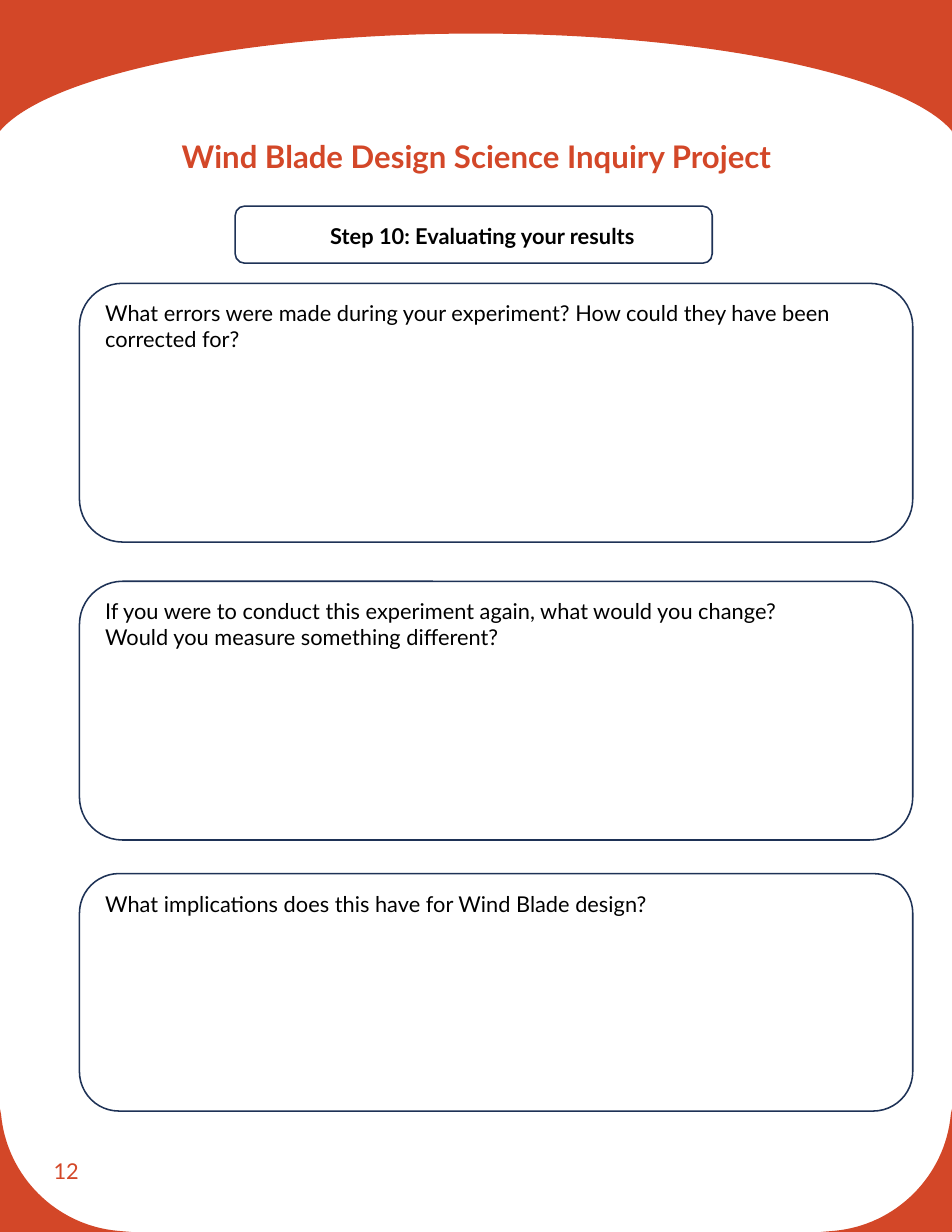
from dataclasses import dataclass

from lxml.etree import SubElement
from pptx import Presentation
from pptx.dml.color import RGBColor
from pptx.enum.shapes import MSO_SHAPE
from pptx.enum.text import MSO_ANCHOR, PP_ALIGN
from pptx.oxml.ns import qn
from pptx.util import Inches, Pt

WIDTH, HEIGHT = 8.5, 11
PANEL_LEFT, PANEL_WIDTH = 0.71, 7.44


@dataclass(frozen=True)
class Theme:
    font: str = "Lato"
    accent: RGBColor = RGBColor(0xD3, 0x47, 0x28)
    outline: RGBColor = RGBColor(0x1E, 0x32, 0x56)
    ink: RGBColor = RGBColor(0, 0, 0)
    title_size: Pt = Pt(20)
    body_size: Pt = Pt(14)
    outline_width: Pt = Pt(1)


THEME = Theme()

# Each step holds one point for a line, or two controls and an end for a curve.
ARCH = [
    [(0, 0)],
    [(WIDTH, 0)],
    [(WIDTH, 1.18)],
    [(WIDTH, 1.17)],
    [(8.09, 0.68), (6.34, 0.3), (4.25, 0.3)],
    [(2.16, 0.3), (0.41, 0.68), (0, 1.17)],
    [(0, 1.18)],
]
CORNER = [
    [(0, 9.9)],
    [(0.01, 9.95)],
    [(0.06, 10.5), (0.5, 10.94), (1.05, 10.99)],
    [(1.17, HEIGHT)],
    [(0, HEIGHT)],
]

PANELS = [
    (2.53, 2.31, [
        "What errors were made during your experiment? How could they have been",
        "corrected for?",
    ]),
    (5.19, 2.31, [
        "If you were to conduct this experiment again, what would you change?",
        "Would you measure something different?",
    ]),
    (7.8, 2.12, ["What implications does this have for Wind Blade design?"]),
]


def mirror(steps):
    return [[(WIDTH - x, y) for x, y in step] for step in steps]


def add_band(page, steps):
    """Build the outline from its end points, then bend the curved segments."""
    ends = [tuple(map(Inches, step[-1])) for step in steps]
    builder = page.shapes.build_freeform(*ends[0])
    builder.add_line_segments(ends[1:], close=True)
    band = builder.convert_to_shape()
    segments = list(band.element.iter(qn("a:lnTo")))
    for segment, step in zip(segments, steps[1:]):
        if len(step) == 3:
            bend_segment(segment, step, band.left, band.top)
    band.shadow.inherit = False
    band.fill.solid()
    band.fill.fore_color.rgb = THEME.accent
    band.line.fill.background()


def bend_segment(segment, points, left, top):
    parent = segment.getparent()
    bend = SubElement(parent, qn("a:cubicBezTo"))
    for x, y in points:
        SubElement(bend, qn("a:pt"), x=str(Inches(x) - left), y=str(Inches(y) - top))
    parent.replace(segment, bend)


def style_paragraph(para, color, size=THEME.body_size, bold=False):
    para.font.name = THEME.font
    para.font.size = size
    para.font.bold = bold
    para.font.color.rgb = color


def add_title(page, text):
    title = page.shapes.title
    title.left, title.top = Inches(0.36), Inches(1.08)
    title.width, title.height = Inches(7.79), Inches(0.86)
    title.text_frame.text = text
    title.text_frame.vertical_anchor = MSO_ANCHOR.TOP
    para = title.text_frame.paragraphs[0]
    para.alignment = PP_ALIGN.CENTER
    para.line_spacing = 1.3
    style_paragraph(para, THEME.accent, THEME.title_size, bold=True)


def add_text(page, area, lines, color=THEME.ink, bold=False, wrap=True,
             anchor=MSO_ANCHOR.TOP):
    box = page.shapes.add_textbox(*map(Inches, area))
    frame = box.text_frame
    frame.word_wrap = wrap
    frame.vertical_anchor = anchor
    frame.text = "\n".join(lines)
    for para in frame.paragraphs:
        style_paragraph(para, color, bold=bold)


def add_outline(page, area):
    panel = page.shapes.add_shape(MSO_SHAPE.ROUNDED_RECTANGLE, *map(Inches, area))
    panel.shadow.inherit = False
    panel.fill.background()
    panel.line.color.rgb = THEME.outline
    panel.line.width = THEME.outline_width


def add_question(page, top, height, lines):
    add_outline(page, (PANEL_LEFT, top, PANEL_WIDTH, height))
    text_height = 0.1 + 0.235 * len(lines)
    add_text(page, (PANEL_LEFT + 0.13, top + 0.1, PANEL_WIDTH, text_height),
             lines, wrap=False)


def main():
    deck = Presentation()
    deck.slide_width, deck.slide_height = Inches(WIDTH), Inches(HEIGHT)
    page = deck.slides.add_slide(deck.slide_layouts[5])
    for steps in (ARCH, CORNER, mirror(CORNER)):
        add_band(page, steps)
    add_text(page, (0.38, 10.16, 1.91, 0.59), ["12"], THEME.accent,
             anchor=MSO_ANCHOR.MIDDLE)
    add_title(page, "Wind Blade Design Science Inquiry Project")
    add_outline(page, (2.1, 1.84, 4.26, 0.51))
    add_text(page, (2.85, 1.94, 4.13, 0.34), ["Step 10: Evaluating your results"],
             bold=True)
    for top, height, lines in PANELS:
        add_question(page, top, height, lines)
    deck.save("out.pptx")


if __name__ == "__main__":
    main()
